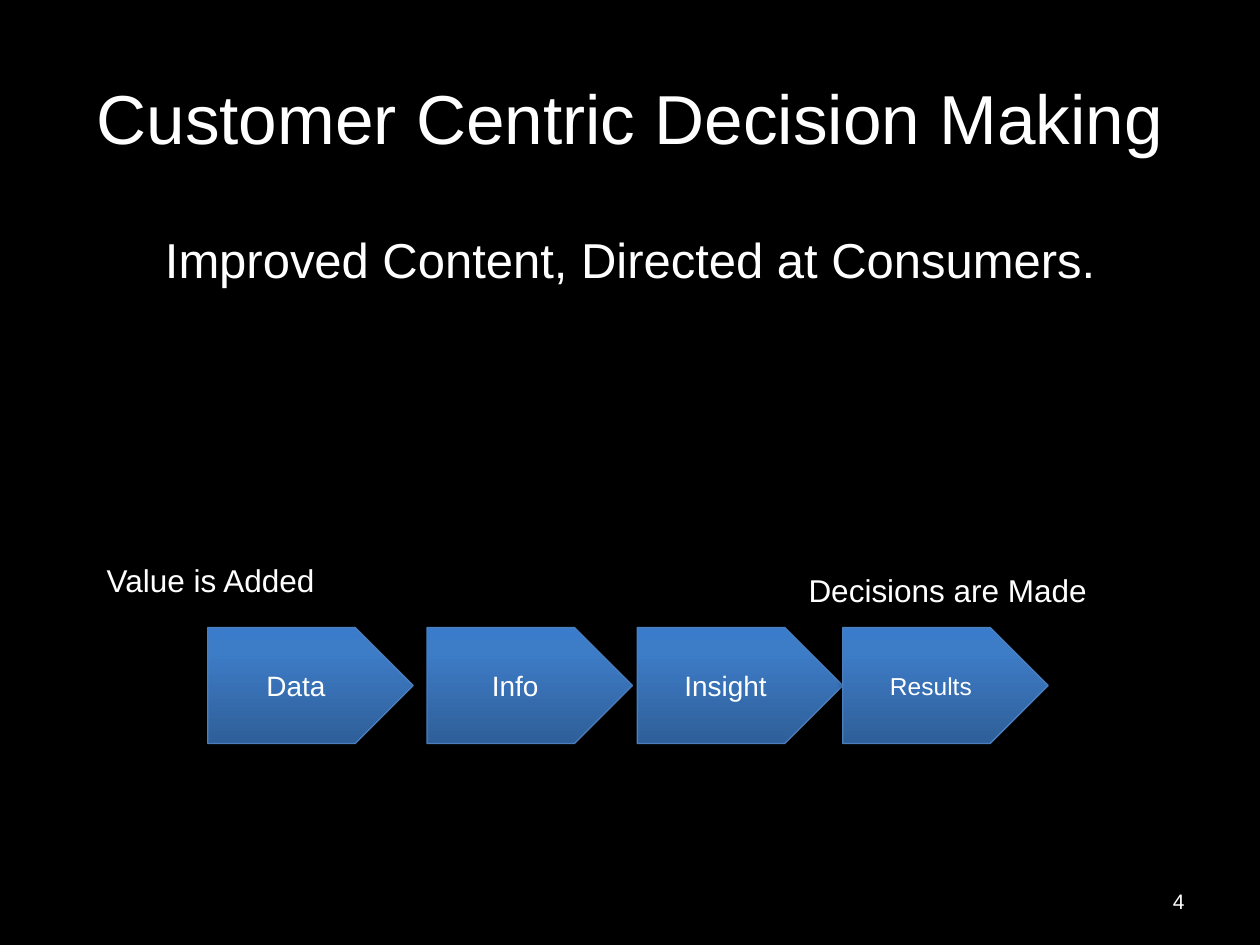
from copy import deepcopy

from pptx import Presentation, util as u
from pptx.dml.color import RGBColor
from pptx.enum import shapes, text
from pptx.oxml import parse_xml
from pptx.oxml.ns import nsdecls

Cm, Pt = u.Cm, u.Pt
rgb = RGBColor.from_string
ALIGN, ANCHOR = text.PP_ALIGN, text.MSO_ANCHOR
SHADOW = f"""<a:effectLst {nsdecls('a')}>
  <a:outerShdw blurRad="40000" dist="23000" dir="5400000" rotWithShape="0">
    <a:srgbClr val="000000"><a:alpha val="35000"/></a:srgbClr>
  </a:outerShdw>
</a:effectLst>"""


def write(shape, words, size, align=ALIGN.LEFT, anchor=ANCHOR.TOP, wrap=True):
    frame = shape.text_frame
    frame.word_wrap = wrap
    frame.vertical_anchor = anchor
    line = frame.paragraphs[0]
    line.alignment = align
    run = line.add_run()
    run.text = words
    run.font.name = "Arial"
    run.font.size = Pt(size)
    run.font.color.rgb = rgb("FFFFFF")


deck = Presentation()
deck.slide_width, deck.slide_height = Cm(25.4), Cm(19.05)
slide = deck.slides.add_slide(deck.slide_layouts[6])
slide.background.fill.solid()
slide.background.fill.fore_color.rgb = rgb("000000")

# Heading, subtitle and page number
title = slide.shapes.add_textbox(Cm(1.27), Cm(0.76), Cm(22.86), Cm(3.18))
write(title, "Customer Centric Decision Making", 39.6, ALIGN.CENTER, ANCHOR.MIDDLE)

subtitle = slide.shapes.add_textbox(Cm(1.27), Cm(4.5), Cm(22.86), Cm(2.51))
write(subtitle, "Improved Content, Directed at Consumers.", 28, ALIGN.CENTER)

page_number = slide.shapes.add_textbox(Cm(18.21), Cm(17.65), Cm(5.92), Cm(1.02))
write(page_number, "4", 12, ALIGN.RIGHT, ANCHOR.MIDDLE)

# Value chain
for stage, left, size in [("Data", 4.19, 16), ("Info", 8.61, 16),
                          ("Insight", 12.85, 16), ("Results", 16.99, 14)]:
    step = slide.shapes.add_shape(shapes.MSO_SHAPE.PENTAGON,
                                  Cm(left), Cm(12.65), Cm(4.14), Cm(2.34))
    step.fill.gradient()
    step.fill.gradient_angle = 90
    stop_list = step.fill._xPr.gradFill.gsLst
    stop_list.append(deepcopy(stop_list[-1]))
    for stop, (position, color) in zip(step.fill.gradient_stops,
                                       [(0, "2F5F99"), (0.8, "3D7CC7"), (1, "3A7CCB")]):
        stop.position = position
        stop.color.rgb = rgb(color)
    step.line.color.rgb = rgb("4B7EBC")
    step.line.width = Pt(0.75)
    step._element.spPr.append(parse_xml(SHADOW))
    write(step, stage, size, ALIGN.CENTER, ANCHOR.MIDDLE)

# Labels above the two ends of the chain
for label, left, top, width in [("Value is Added", 1.9, 11.18, 6.15),
                                ("Decisions are Made", 16.05, 11.38, 8.08)]:
    caption = slide.shapes.add_textbox(Cm(left), Cm(top), Cm(width), Cm(1.27))
    write(caption, label, 18, wrap=False)

deck.save("out.pptx")
